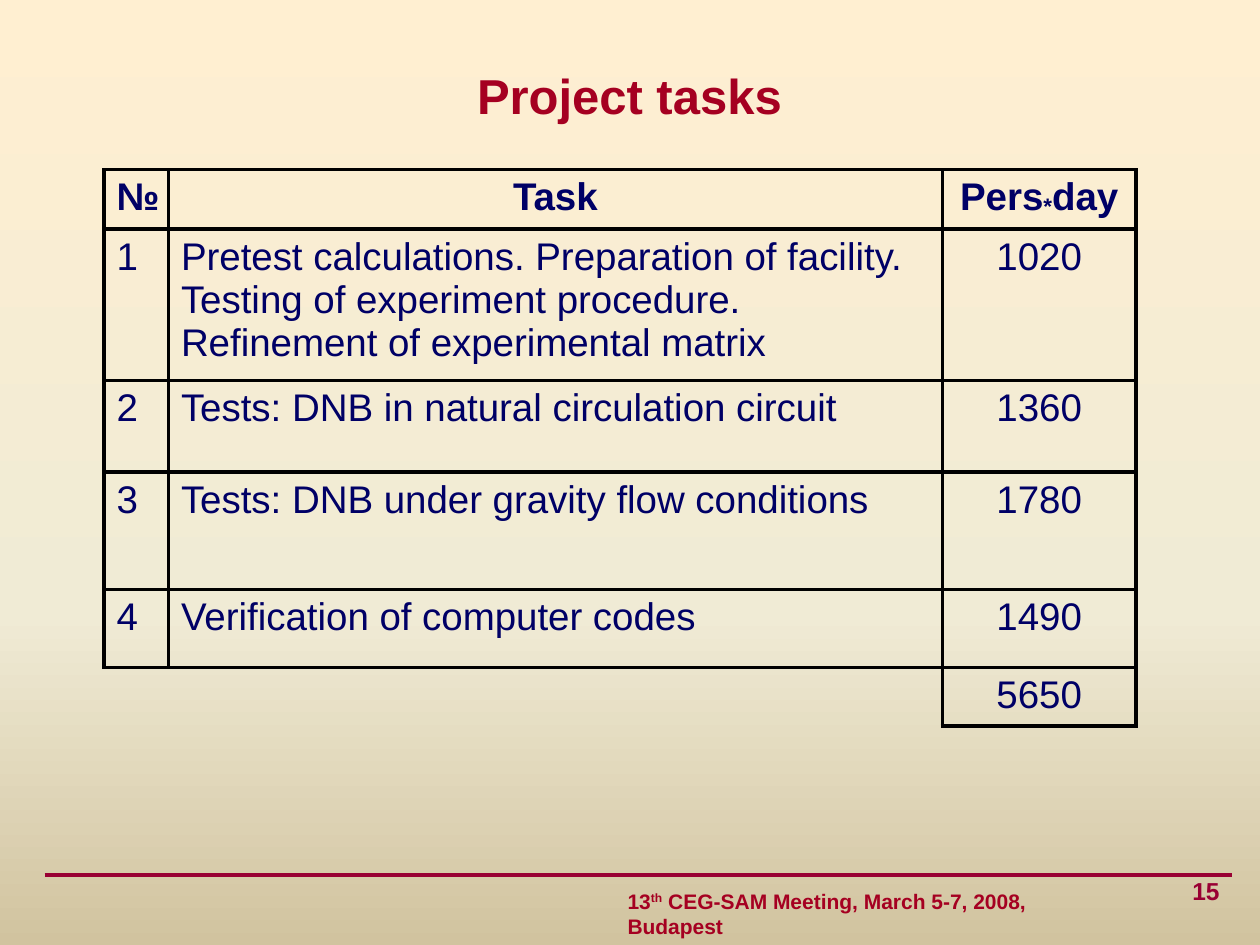
from copy import deepcopy

from lxml.etree import SubElement
from pptx import Presentation
from pptx.dml.color import RGBColor
from pptx.enum.shapes import MSO_CONNECTOR
from pptx.enum.text import MSO_ANCHOR, PP_ALIGN
from pptx.oxml.ns import qn
from pptx.util import Pt

COLORS = {
    "sky": "FFEFD1",
    "middle": "F0EBD5",
    "ground": "D1C39F",
    "title": "A50021",
    "rule": "990033",
    "text": "000066",
    "border": "000000",
}
FONT = "Arial"
BORDER_WIDTH = 2.25
COLUMN_WIDTHS = [36.75, 442.25, 110.75]
ROW_HEIGHTS = [33.75, 81, 52.5, 67, 44.5, 32.5]
HEADER = [[("№", 0)], [("Task", 0)], [("Pers", 0), ("*", -10), ("day", 0)]]
TASKS = [
    ("1", "Pretest calculations. Preparation of facility. Testing of experiment "
          "procedure. Refinement of experimental matrix", "1020"),
    ("2", "Tests: DNB in natural circulation circuit", "1360"),
    ("3", "Tests: DNB under gravity flow conditions", "1780"),
    ("4", "Verification of computer codes", "1490"),
    ("", "", "5650"),
]


def rgb(name):
    return RGBColor.from_string(COLORS[name])


def add_span(para, text, size, color, bold=True, baseline=0):
    span = para.add_run()
    span.text = text
    span.font.name = FONT
    span.font.size = Pt(size)
    span.font.bold = bold
    span.font.color.rgb = rgb(color)
    if baseline:
        span.font._element.set("baseline", str(baseline * 1000))


def add_text_box(page, box, align, wrap=True):
    frame = page.shapes.add_textbox(*map(Pt, box)).text_frame
    frame.word_wrap = wrap
    frame.vertical_anchor = MSO_ANCHOR.MIDDLE
    para = frame.paragraphs[0]
    para.alignment = align
    return para


def paint_background(page):
    fill = page.background.fill
    fill.gradient()
    fill.gradient_angle = 270
    stop_list = page.element.find(".//" + qn("a:gsLst"))
    stop_list.append(deepcopy(stop_list[-1]))
    stops = zip(fill.gradient_stops, (0, 0.65, 1), ("sky", "middle", "ground"))
    for stop, position, color in stops:
        stop.position = position
        stop.color.rgb = rgb(color)


def add_title(page, box):
    para = add_text_box(page, box, PP_ALIGN.CENTER)
    add_span(para, "Project tasks", 28, "title")
    add_span(para, " ", 24, "title")


def set_borders(cell, sides):
    properties = cell._tc.get_or_add_tcPr()
    for side in "LRTB":
        line = SubElement(properties, qn(f"a:ln{side}"), w=str(Pt(BORDER_WIDTH)))
        if side in sides:
            fill = SubElement(line, qn("a:solidFill"))
            SubElement(fill, qn("a:srgbClr"), val=COLORS["border"])
        else:
            SubElement(line, qn("a:noFill"))
    cell.fill.background()


def add_task_table(page, box):
    rows = [HEADER] + [[[(text, 0)] for text in task] for task in TASKS]
    table = page.shapes.add_table(len(rows), len(COLUMN_WIDTHS), *map(Pt, box)).table
    table.first_row = False
    table.horz_banding = False
    for column, width in zip(table.columns, COLUMN_WIDTHS):
        column.width = Pt(width)
    for row, height in zip(table.rows, ROW_HEIGHTS):
        row.height = Pt(height)
    open_sides = {(5, 0): "T", (5, 1): "TR"}
    for row_index, row in enumerate(rows):
        for column_index, parts in enumerate(row):
            cell = table.cell(row_index, column_index)
            set_borders(cell, open_sides.get((row_index, column_index), "LRTB"))
            para = cell.text_frame.paragraphs[0]
            centred = row_index == 0 or column_index == 2
            para.alignment = PP_ALIGN.CENTER if centred else PP_ALIGN.LEFT
            for text, baseline in parts:
                if text:
                    add_span(para, text, 22, "text", row_index == 0, baseline)


def add_footer(page, box):
    left, top, width, height = box
    right = left + width
    rule = page.shapes.add_connector(
        MSO_CONNECTOR.STRAIGHT, Pt(left), Pt(top), Pt(right), Pt(top))
    rule.line.color.rgb = rgb("rule")
    rule.line.width = Pt(2.25)
    SubElement(rule._element.spPr, qn("a:effectLst"))

    meeting = add_text_box(
        page, (left + 326, top + 4.25, 300, height), PP_ALIGN.LEFT, wrap=False)
    add_span(meeting, "13", 12, "title")
    add_span(meeting, "th", 12, "title", baseline=30)
    add_span(meeting, " CEG-SAM Meeting, March 5-7, 2008, Budapest", 12, "title")

    number = add_text_box(
        page, (right - 150, top - 8.5, 150, height), PP_ALIGN.RIGHT)
    add_span(number, "15", 14, "rule")


def main():
    deck = Presentation()
    deck.slide_width = Pt(720)
    deck.slide_height = Pt(540)
    page = deck.slides.add_slide(deck.slide_layouts[6])
    paint_background(page)
    add_footer(page, (25.5, 499.75, 678.5, 36))
    add_title(page, (57, 29, 612, 50.5))
    add_task_table(page, (59.5, 97, sum(COLUMN_WIDTHS), sum(ROW_HEIGHTS)))
    deck.save("out.pptx")


if __name__ == "__main__":
    main()
